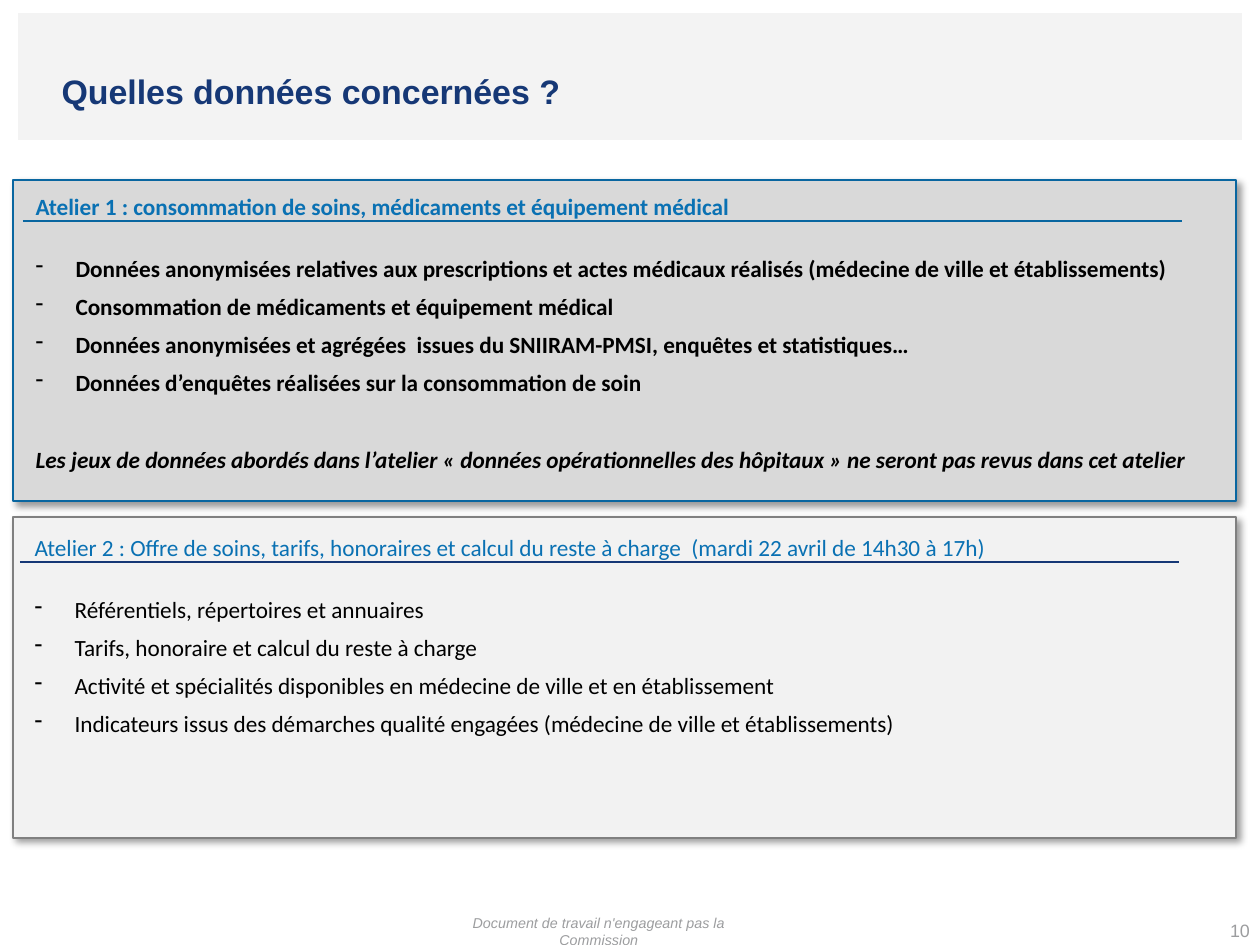
from lxml import etree
from pptx import Presentation
from pptx.dml.color import RGBColor
from pptx.enum.shapes import MSO_CONNECTOR as Connector, MSO_SHAPE as Shape
from pptx.enum.text import MSO_ANCHOR as Anchor, PP_ALIGN as Align
from pptx.oxml import parse_xml
from pptx.oxml.ns import nsdecls, qn
from pptx.util import Pt

PX = 7112  # EMU per px
WIDTH, HEIGHT = 1260, 945

WHITE = RGBColor(0xFF, 0xFF, 0xFF)
BAND = RGBColor(0xF3, 0xF3, 0xF3)
NAVY = RGBColor(0x16, 0x38, 0x76)
BLUE = RGBColor(0x0A, 0x71, 0xB3)
DEEP_BLUE = RGBColor(0x09, 0x66, 0xA0)
BLACK = RGBColor(0, 0, 0)
DARK_PANEL = RGBColor(0xD9, 0xD9, 0xD9)
LIGHT_PANEL = RGBColor(0xF2, 0xF2, 0xF2)
GREY_LINE = RGBColor(0x80, 0x80, 0x80)
FOOTER_GREY = RGBColor(0x9C, 0x9D, 0x9F)

SHADOW = (
    f'<a:effectLst {nsdecls("a")}>'
    '<a:outerShdw blurRad="50800" dist="38100" dir="2700000" algn="tl" rotWithShape="0">'
    '<a:srgbClr val="000000"><a:alpha val="40000"/></a:srgbClr>'
    '</a:outerShdw></a:effectLst>'
)


def emu(*lengths):
    return [length * PX for length in lengths]


def add_rect(page, box, fill, line=None, line_width=0.75):
    rect = page.shapes.add_shape(Shape.RECTANGLE, *emu(*box))
    rect.shadow.inherit = False
    rect.fill.solid()
    rect.fill.fore_color.rgb = fill
    if line is None:
        rect.line.fill.background()
    else:
        rect.line.color.rgb = line
        rect.line.width = Pt(line_width)
    return rect


def add_text(page, box, lines, size, color, font="Calibri", bold=False, italic=False):
    frame = page.shapes.add_textbox(*emu(*box)).text_frame
    frame.word_wrap = True
    frame.text = "\n".join(lines)
    for para in frame.paragraphs:
        for span in para.runs:
            span.font.name = font
            span.font.size = Pt(size)
            span.font.color.rgb = color
            span.font.bold = bold
            span.font.italic = italic
    return frame


def add_dash(para):
    props = para._p.get_or_add_pPr()
    props.set("marL", str(40 * PX))
    props.set("indent", str(-40 * PX))
    etree.SubElement(props, qn("a:buChar")).set("char", "-")


def add_header(page, box, title):
    left, top, width, height = box
    add_rect(page, box, BAND)
    frame = add_text(page, (left - 18, top - 12, WIDTH, height + 52), [title],
                     19, NAVY, "Arial", bold=True)
    frame.vertical_anchor = Anchor.MIDDLE
    frame.paragraphs[0]._p.get_or_add_pPr().set("marL", str(49 * PX))


def add_workshop(page, box, inset, heading, items, fill, border, border_width,
                 rule_color, rule_offset=0, note=None, bold=False):
    left, top, width, height = box
    panel = add_rect(page, box, fill, border, border_width)
    props = panel._element.spPr
    props.replace(props.find(qn("a:effectLst")), parse_xml(SHADOW))

    x, y = left + inset[0], top + inset[1]

    # Dashed list, then the closing note
    lines = items + ([note] if note else [])
    frame = add_text(page, (x, y + 68, 1210, 245), lines, 13, BLACK, bold=bold)
    for index, para in enumerate(frame.paragraphs):
        if index:
            para.space_before = Pt(5.7)
        if index < len(items):
            add_dash(para)
        else:
            para.space_before = Pt(27.2)
            para.runs[0].font.italic = True

    # Heading and its rule
    add_text(page, (x, y + 6, 1210, 41), [heading], 13, BLUE, bold=bold)
    start = x + rule_offset
    rule = page.shapes.add_connector(
        Connector.STRAIGHT, *emu(start, y + 41, start + 1159, y + 41))
    rule.line.color.rgb = rule_color
    rule.line.width = Pt(0.75)
    etree.SubElement(rule._element.spPr, qn("a:effectLst"))


def add_footer(page, box, text, **style):
    frame = add_text(page, box, [text], color=FOOTER_GREY, font="Arial", **style)
    frame.word_wrap = False
    frame.vertical_anchor = Anchor.MIDDLE
    frame.margin_left = frame.margin_right = 0
    frame.margin_top = frame.margin_bottom = 0
    frame.paragraphs[0].alignment = Align.CENTER


def main():
    deck = Presentation()
    deck.slide_width, deck.slide_height = emu(WIDTH, HEIGHT)
    page = deck.slides.add_slide(deck.slide_layouts[6])
    page.background.fill.solid()
    page.background.fill.fore_color.rgb = WHITE

    add_header(page, (18, 13, 1224, 127), "Quelles données concernées ?")

    add_workshop(
        page, (13, 180, 1223, 321), (10, 0),
        "Atelier 1 : consommation de soins, médicaments et équipement médical",
        ["Données anonymisées relatives aux prescriptions et actes médicaux réalisés "
         "(médecine de ville et établissements)",
         "Consommation de médicaments et équipement médical",
         "Données anonymisées et agrégées  issues du SNIIRAM-PMSI, enquêtes et statistiques…",
         "Données d’enquêtes réalisées sur la consommation de soin"],
        DARK_PANEL, DEEP_BLUE, 1.5, DEEP_BLUE, bold=True,
        note="Les jeux de données abordés dans l’atelier « données opérationnelles "
             "des hôpitaux » ne seront pas revus dans cet atelier")

    add_workshop(
        page, (13, 517, 1223, 321), (9, 4),
        "Atelier 2 : Offre de soins, tarifs, honoraires et calcul du reste à charge  "
        "(mardi 22 avril de 14h30 à 17h)",
        ["Référentiels, répertoires et annuaires",
         "Tarifs, honoraire et calcul du reste à charge",
         "Activité et spécialités disponibles en médecine de ville et en établissement",
         "Indicateurs issus des démarches qualité engagées "
         "(médecine de ville et établissements)"],
        LIGHT_PANEL, GREY_LINE, 0.75, NAVY, rule_offset=-2)

    add_footer(page, (432, 923, 334, 17),
               "Document de travail n'engageant pas la Commission", size=8, italic=True)
    add_footer(page, (1224, 919, 32, 22), "10", size=10)

    deck.save("out.pptx")


if __name__ == "__main__":
    main()
